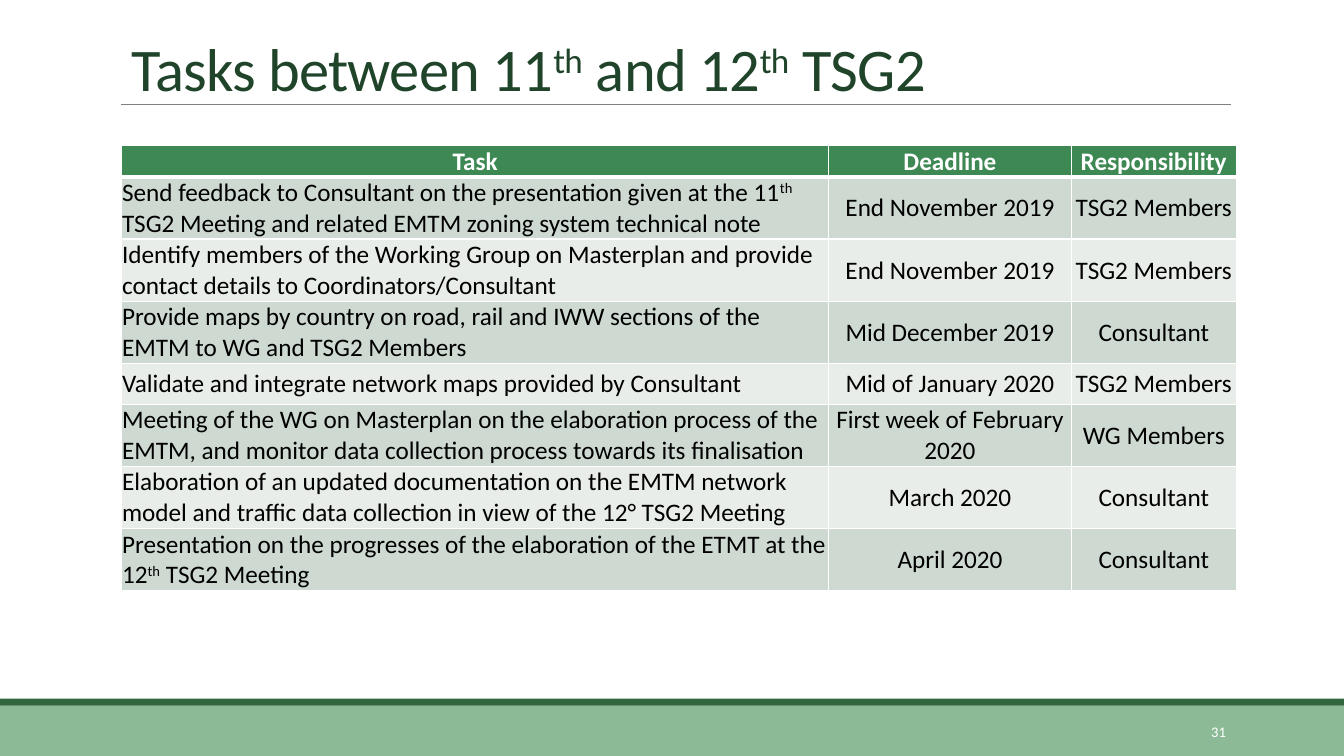
import pptx
import pptx.util
import pptx.dml.color
import pptx.enum.shapes
import pptx.enum.text
import pptx.oxml
import pptx.oxml.ns

Pt = pptx.util.Pt
ALIGN = pptx.enum.text.PP_ALIGN
ANCHOR = pptx.enum.text.MSO_ANCHOR

# Content: text between carets is superscript
TITLE = "Tasks between 11^th^ and 12^th^ TSG2"
PAGE_NUMBER = "31"
HEADER = ("Task", "Deadline", "Responsibility")
TASKS = [
    ("Send feedback to Consultant on the presentation given at the 11^th^ TSG2 Meeting "
     "and related EMTM zoning system technical note", "End November 2019", "TSG2 Members"),
    ("Identify members of the Working Group on Masterplan and provide contact details "
     "to Coordinators/Consultant", "End November 2019", "TSG2 Members"),
    ("Provide maps by country on road, rail and IWW sections of the EMTM to WG and "
     "TSG2 Members", "Mid December 2019", "Consultant"),
    ("Validate and integrate network maps provided by Consultant",
     "Mid of January 2020", "TSG2 Members"),
    ("Meeting of the WG on Masterplan on the elaboration process of the EMTM, and "
     "monitor data collection process towards its finalisation",
     "First week of February 2020", "WG Members"),
    ("Elaboration of an updated documentation on the EMTM network model and traffic "
     "data collection in view of the 12° TSG2 Meeting", "March 2020", "Consultant"),
    ("Presentation on the progresses of the elaboration of the ETMT at the 12^th^ "
     "TSG2 Meeting", "April 2020", "Consultant"),
]
COLORS = {
    "title": "1F442A", "rule": "808080", "footer": "8CB996", "stripe": "2F663E",
    "header": "3E8853", "odd": "CEDAD1", "even": "E8EDE9",
    "white": "FFFFFF", "black": "000000",
}
COLUMN_WIDTHS = (505.2, 173.2, 117.9)
HEADER_HEIGHT, ONE_LINE_HEIGHT, TWO_LINE_HEIGHT = 22.4, 29.3, 44.3
ONE_LINE_TASK = 4


def color(name):
    return pptx.dml.color.RGBColor.from_string(COLORS[name])


def write_text(frame, text, size=18, fill="black", bold=False, align=ALIGN.LEFT,
               anchor=ANCHOR.MIDDLE, line_spacing=None, tracking=None):
    frame.word_wrap = True
    frame.vertical_anchor = anchor
    paragraph = frame.paragraphs[0]
    paragraph.alignment = align
    paragraph.line_spacing = line_spacing
    for index, part in enumerate(text.split("^")):
        run = paragraph.add_run()
        run.text = part
        run.font.name = "Calibri"
        run.font.size = Pt(size)
        run.font.bold = bold
        run.font.color.rgb = color(fill)
        properties = run._r.get_or_add_rPr()
        if index % 2:
            properties.set("baseline", "30000")
        if tracking is not None:
            properties.set("spc", str(round(tracking * 100)))


def add_bar(slide, top, height, fill):
    shape = slide.shapes.add_shape(pptx.enum.shapes.MSO_SHAPE.RECTANGLE,
                                   0, Pt(top), Pt(960), Pt(height))
    shape.shadow.inherit = False
    shape.fill.solid()
    shape.fill.fore_color.rgb = color(fill)
    shape.line.fill.background()


def set_borders(cell, **widths):
    properties = cell._tc.get_or_add_tcPr()
    for position, side in enumerate("LRTB"):
        width = Pt(widths.get(side, 1))
        properties.insert(position, pptx.oxml.parse_xml(
            f'<a:ln{side} {pptx.oxml.ns.nsdecls("a")} w="{width}"><a:solidFill>'
            f'<a:srgbClr val="{COLORS["white"]}"/></a:solidFill></a:ln{side}>'))


def add_task_table(slide):
    rows = [HEADER] + TASKS
    heights = [HEADER_HEIGHT] + [TWO_LINE_HEIGHT] * len(TASKS)
    heights[ONE_LINE_TASK] = ONE_LINE_HEIGHT
    table = slide.shapes.add_table(len(rows), len(HEADER), Pt(86.8), Pt(104),
                                   Pt(sum(COLUMN_WIDTHS)), Pt(sum(heights))).table
    table.horz_banding = False
    for column, width in zip(table.columns, COLUMN_WIDTHS):
        column.width = Pt(width)
    for row_index, (row, height) in enumerate(zip(rows, heights)):
        table.rows[row_index].height = Pt(height)
        is_header = row_index == 0
        fill = "header" if is_header else "odd" if row_index % 2 else "even"
        for column_index, text in enumerate(row):
            cell = table.cell(row_index, column_index)
            cell.margin_left = cell.margin_right = cell.margin_top = Pt(0.4)
            cell.margin_bottom = 0
            cell.vertical_anchor = ANCHOR.MIDDLE
            cell.fill.solid()
            cell.fill.fore_color.rgb = color(fill)
            set_borders(cell, B=3 if is_header else 1, T=3 if row_index == 1 else 1)
            centred = is_header or column_index > 0
            write_text(cell.text_frame, text, bold=is_header,
                       fill="white" if is_header else "black",
                       align=ALIGN.CENTER if centred else ALIGN.LEFT)


def main():
    presentation = pptx.Presentation()
    presentation.slide_width, presentation.slide_height = Pt(960), Pt(540)
    slide = presentation.slides.add_slide(presentation.slide_layouts[5])

    # Footer band and title rule
    add_bar(slide, 504, 36, "footer")
    add_bar(slide, 499, 5, "stripe")
    rule = slide.shapes.add_connector(pptx.enum.shapes.MSO_CONNECTOR.STRAIGHT,
                                      Pt(86.4), Pt(74.6), Pt(879), Pt(74.6))
    rule.line.color.rgb = color("rule")
    rule.line.width = Pt(0.5)
    rule._element.spPr.append(pptx.oxml.parse_xml(
        f'<a:effectLst {pptx.oxml.ns.nsdecls("a")}/>'))

    # Title
    title = slide.shapes.title
    title.left, title.top, title.width, title.height = Pt(86.4), Pt(22.3), Pt(792), Pt(55.4)
    title.text_frame.auto_size = pptx.enum.text.MSO_AUTO_SIZE.NONE
    write_text(title.text_frame, TITLE, size=43.2, fill="title", anchor=ANCHOR.BOTTOM,
               line_spacing=0.85, tracking=-0.5)

    # Task table
    add_task_table(slide)

    # Page number
    number_box = slide.shapes.add_textbox(Pt(779.8), Pt(508.3), Pt(103), Pt(28.8))
    write_text(number_box.text_frame, PAGE_NUMBER, size=10.5, fill="white", align=ALIGN.RIGHT)

    presentation.save("out.pptx")


if __name__ == "__main__":
    main()
